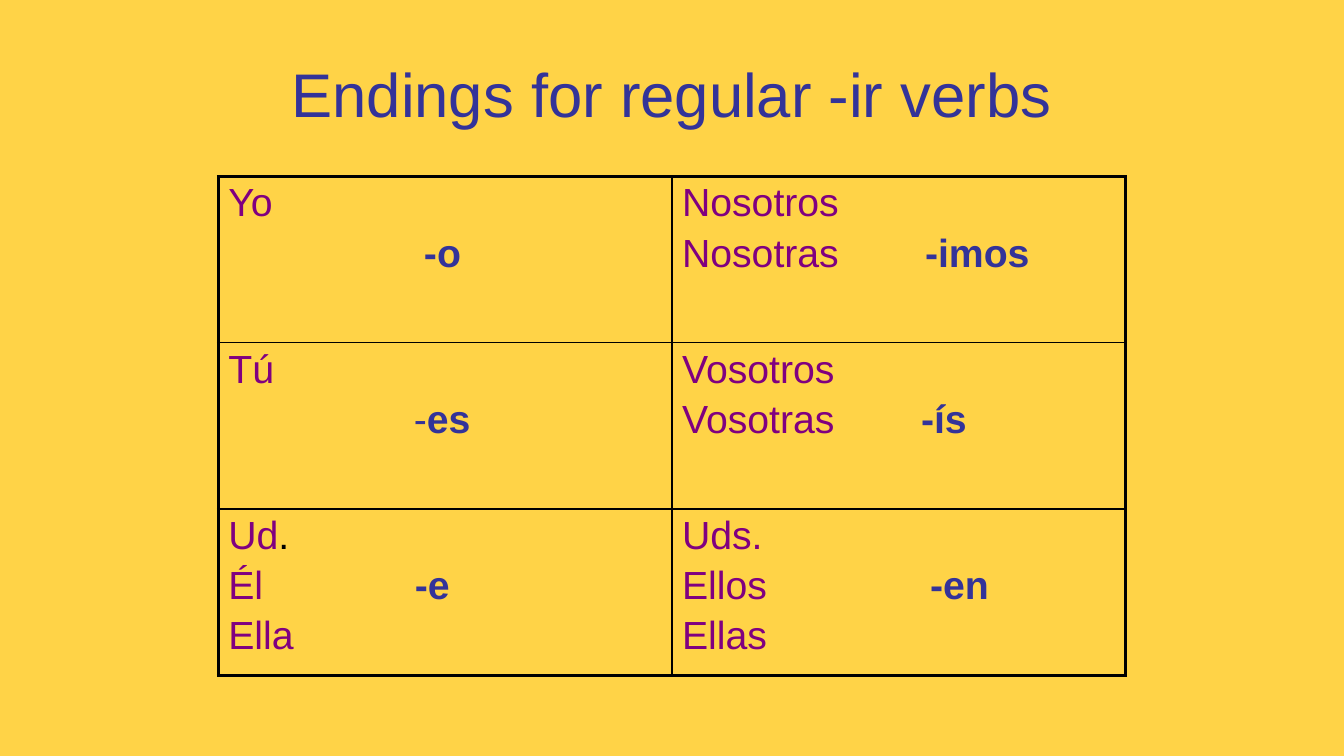
import pptx
import pptx.util
import pptx.dml.color
import pptx.enum.text
import pptx.oxml.ns
from lxml import etree

W, H = 13.33, 7.5
YELLOW, BLUE, PURPLE, BLACK = "FFD347", "333399", "800080", "000000"
ROWS, COLS = 3, 2
ENDINGS = [
    [(["Yo", ""], "-o", 1.94), (["Nosotros", "Nosotras"], "-imos", 2.41)],
    [(["Tú", ""], "-es", 1.84), (["Vosotros", "Vosotras"], "-ís", 2.37)],
    [(["Ud.", "Él", "Ella"], "-e", 1.85), (["Uds.", "Ellos", "Ellas"], "-en", 2.46)],
]


def color(value):
    """Return the colour for a hex string."""
    return pptx.dml.color.RGBColor.from_string(value)


def add_text(p, text, size=28, fill=PURPLE, bold=False):
    """Add a formatted run to a paragraph."""
    r = p.add_run()
    r.text = text
    r.font.name = "Arial"
    r.font.size = pptx.util.Pt(size)
    r.font.bold = bold
    r.font.color.rgb = color(fill)


def add_tab_stop(p, position):
    """Give a paragraph one left tab stop, in inches."""
    tabs = etree.SubElement(p._p.get_or_add_pPr(), pptx.oxml.ns.qn("a:tabLst"))
    etree.SubElement(tabs, pptx.oxml.ns.qn("a:tab"),
                     pos=str(pptx.util.Inches(position)), algn="l")


def set_borders(cell, row, col):
    """Draw thick outer and thin inner borders on a cell."""
    outer = {"L": col == 0, "R": col == COLS - 1, "T": row == 0, "B": row == ROWS - 1}
    tc_pr = cell._tc.get_or_add_tcPr()
    for side, thick in outer.items():
        ln = etree.SubElement(tc_pr, pptx.oxml.ns.qn(f"a:ln{side}"),
                              w=str(pptx.util.Pt(2.25 if thick else 1)))
        solid = etree.SubElement(ln, pptx.oxml.ns.qn("a:solidFill"))
        etree.SubElement(solid, pptx.oxml.ns.qn("a:srgbClr"), val=BLACK)


def fill_cell(cell, pronouns, ending, tab):
    """Write the pronouns, with the ending on the second line."""
    tf = cell.text_frame
    for i, pronoun in enumerate(pronouns):
        p = tf.add_paragraph() if i else tf.paragraphs[0]
        p.space_before = pptx.util.Pt(4.6 if i else 0)
        if pronoun == "Ud.":
            add_text(p, "Ud")
            add_text(p, ".", fill=BLACK)
        elif pronoun:
            add_text(p, pronoun)
        if i == 1:
            add_tab_stop(p, tab)
            add_text(p, "\t")
            if ending == "-es":
                add_text(p, "-", fill=BLUE)
                ending = "es"
            add_text(p, ending, fill=BLUE, bold=True)


def add_title(s, text, box):
    """Place the centred title in its box."""
    tf = s.shapes.add_textbox(*map(pptx.util.Inches, box)).text_frame
    tf.word_wrap = True
    tf.vertical_anchor = pptx.enum.text.MSO_ANCHOR.MIDDLE
    p = tf.paragraphs[0]
    p.alignment = pptx.enum.text.PP_ALIGN.CENTER
    add_text(p, text, size=44, fill=BLUE)


def add_endings_table(s, box):
    """Place the table of pronouns and endings in its box."""
    table = s.shapes.add_table(ROWS, COLS, *map(pptx.util.Inches, box)).table
    table.first_row = table.horz_banding = False
    for row, entries in enumerate(ENDINGS):
        for col, entry in enumerate(entries):
            cell = table.cell(row, col)
            fill_cell(cell, *entry)
            set_borders(cell, row, col)
            cell.fill.background()


def main():
    """Build and save the slide."""
    prs = pptx.Presentation()
    prs.slide_width, prs.slide_height = pptx.util.Inches(W), pptx.util.Inches(H)
    s = prs.slides.add_slide(prs.slide_layouts[6])
    s.background.fill.solid()
    s.background.fill.fore_color.rgb = color(YELLOW)
    add_title(s, "Endings for regular -ir verbs", (W * 0.05, H * 0.04, W * 0.9, H / 6))
    add_endings_table(s, ((W - 9) / 2, 1.75, 9, H * 0.66))
    prs.save("out.pptx")


if __name__ == "__main__":
    main()
